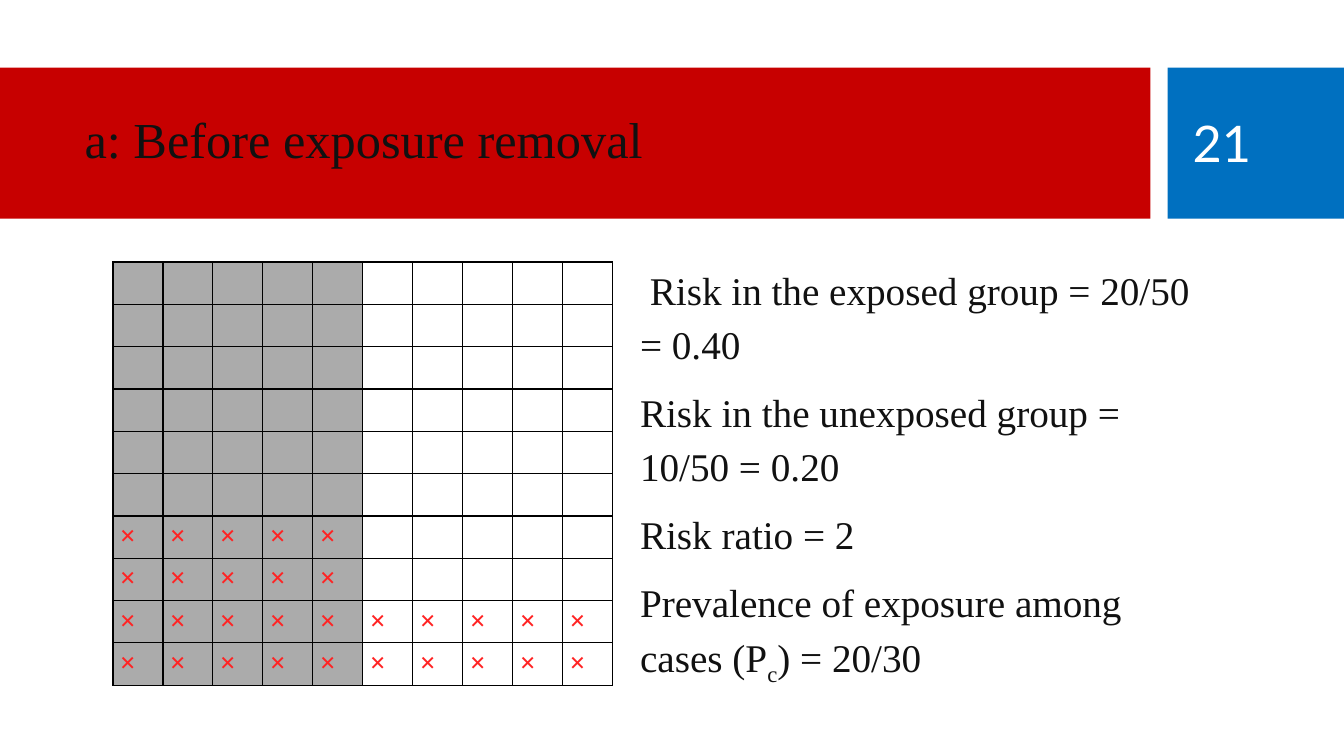
from dataclasses import dataclass

import lxml.etree
import pptx
import pptx.dml.color
import pptx.enum.shapes
import pptx.enum.text
import pptx.oxml.ns
import pptx.util

Inches = pptx.util.Inches
Pt = pptx.util.Pt


@dataclass(frozen=True)
class Theme:
    red: str = "C70000"
    blue: str = "0070C0"
    ink: str = "111111"
    white: str = "FFFFFF"
    exposed: str = "ABABAB"
    case: str = "FF2323"
    grid: str = "000000"
    serif: str = "Times New Roman"
    sans: str = "Lato"
    heading_size: int = 36
    body_size: int = 28
    case_size: int = 20


@dataclass(frozen=True)
class Box:
    left: float
    top: float
    width: float
    height: float

    def lengths(self) -> tuple:
        return tuple(Inches(v) for v in (self.left, self.top, self.width, self.height))


@dataclass(frozen=True)
class Band:
    box: Box
    color: str


@dataclass(frozen=True)
class Heading:
    box: Box
    text: str
    font: str
    color: str
    line_spacing: float


THEME = Theme()
BANDS = (
    Band(Box(0, 0.67, 11.41, 1.5), THEME.red),
    Band(Box(11.58, 0.67, 1.75, 1.5), THEME.blue),
)
HEADINGS = (
    Heading(Box(0.74, 0.82, 10.51, 1.18), "a: Before exposure removal",
            THEME.serif, THEME.ink, 0.9),
    Heading(Box(11.73, 0.82, 1.26, 1.19), "21", THEME.sans, THEME.white, 1.0),
)
POPULATION_BOX = Box(1.12, 2.6, 4.96, 4.2)
GRID_SIZE = 10
EXPOSED_COLUMNS = 5
EXPOSED_CASE_ROWS = 4
UNEXPOSED_CASE_ROWS = 2
FINDINGS_BOX = Box(6.25, 2.52, 5.87, 4.32)
# Each finding is a sequence of runs; every second run is a subscript.
FINDINGS = (
    ("\u00a0Risk in the exposed group = 20/50 = 0.40",),
    ("Risk in the unexposed group = 10/50 = 0.20",),
    ("Risk ratio = 2",),
    ("Prevalence of exposure among cases (P", "c", ") = 20/30"),
)


def rgb(color: str) -> pptx.dml.color.RGBColor:
    return pptx.dml.color.RGBColor.from_string(color)


def style_run(run, font: str, size: int, color: str, bold: bool = False) -> None:
    run.font.name = font
    run.font.size = Pt(size)
    run.font.color.rgb = rgb(color)
    run.font.bold = bold


def draw_band(slide, band: Band) -> None:
    rectangle = slide.shapes.add_shape(
        pptx.enum.shapes.MSO_SHAPE.RECTANGLE, *band.box.lengths())
    rectangle.shadow.inherit = False
    rectangle.fill.solid()
    rectangle.fill.fore_color.rgb = rgb(band.color)
    rectangle.line.fill.background()


def draw_heading(slide, heading: Heading) -> None:
    frame = slide.shapes.add_textbox(*heading.box.lengths()).text_frame
    frame.word_wrap = True
    frame.vertical_anchor = pptx.enum.text.MSO_ANCHOR.MIDDLE
    frame.text = heading.text
    paragraph = frame.paragraphs[0]
    paragraph.line_spacing = heading.line_spacing
    style_run(paragraph.runs[0], heading.font, THEME.heading_size, heading.color)


def outline_cell(cell) -> None:
    """Give the cell a thin line on all four sides, ahead of its fill."""
    properties = cell._tc.get_or_add_tcPr()
    for position, side in enumerate(("a:lnL", "a:lnR", "a:lnT", "a:lnB")):
        line = lxml.etree.Element(pptx.oxml.ns.qn(side), w=str(Pt(1)))
        fill = lxml.etree.SubElement(line, pptx.oxml.ns.qn("a:solidFill"))
        lxml.etree.SubElement(fill, pptx.oxml.ns.qn("a:srgbClr"), val=THEME.grid)
        properties.insert(position, line)


def draw_population(slide) -> None:
    """Draw one cell per person: grey if exposed, marked if a case."""
    population = slide.shapes.add_table(
        GRID_SIZE, GRID_SIZE, *POPULATION_BOX.lengths()).table
    population.first_row = False
    population.horz_banding = False
    for column in population.columns:
        column.width = Inches(POPULATION_BOX.width / GRID_SIZE)
    for row in range(GRID_SIZE):
        population.rows[row].height = Inches(POPULATION_BOX.height / GRID_SIZE)
        for column in range(GRID_SIZE):
            cell = population.cell(row, column)
            exposed = column < EXPOSED_COLUMNS
            case_rows = EXPOSED_CASE_ROWS if exposed else UNEXPOSED_CASE_ROWS
            cell.margin_left = cell.margin_right = Inches(0.07)
            cell.margin_top = cell.margin_bottom = 0
            cell.fill.solid()
            cell.fill.fore_color.rgb = rgb(THEME.exposed if exposed else THEME.white)
            outline_cell(cell)
            if row >= GRID_SIZE - case_rows:
                cell.text_frame.text = "×"
                paragraph = cell.text_frame.paragraphs[0]
                paragraph.line_spacing = 1.15
                style_run(paragraph.runs[0], THEME.serif, THEME.case_size,
                          THEME.case, bold=True)


def draw_findings(slide) -> None:
    frame = slide.shapes.add_textbox(*FINDINGS_BOX.lengths()).text_frame
    frame.word_wrap = True
    for number, finding in enumerate(FINDINGS):
        paragraph = frame.add_paragraph() if number else frame.paragraphs[0]
        paragraph.line_spacing = 1.15
        paragraph.space_after = Pt(10)
        for position, text in enumerate(finding):
            run = paragraph.add_run()
            run.text = text
            style_run(run, THEME.serif, THEME.body_size, THEME.ink)
            if position % 2:
                run.font._element.set("baseline", "-25000")


def main() -> None:
    presentation = pptx.Presentation()
    presentation.slide_width = Inches(13.33)
    presentation.slide_height = Inches(7.5)
    slide = presentation.slides.add_slide(presentation.slide_layouts[6])
    for band in BANDS:
        draw_band(slide, band)
    for heading in HEADINGS:
        draw_heading(slide, heading)
    draw_population(slide)
    draw_findings(slide)
    presentation.save("out.pptx")


if __name__ == "__main__":
    main()
